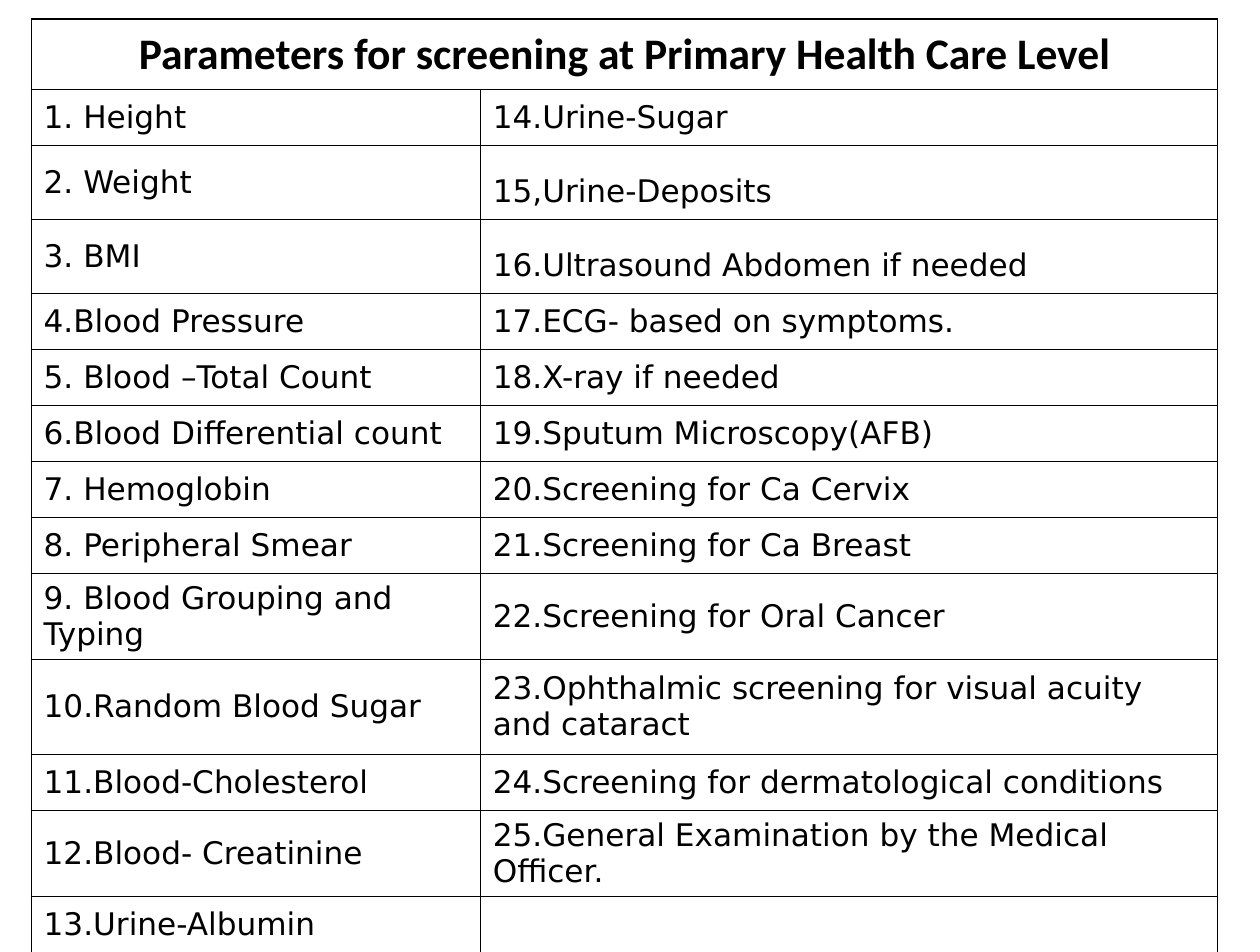
"""Build a slide with a table of health screening parameters."""
from itertools import zip_longest

from lxml.etree import SubElement
from pptx import Presentation
from pptx.dml.color import RGBColor
from pptx.enum.text import MSO_ANCHOR, PP_ALIGN
from pptx.oxml.ns import qn
from pptx.util import Inches, Pt

TITLE = "Parameters for screening at Primary Health Care Level"
LEFT_ITEMS = [
    "1. Height",
    "2. Weight",
    "3. BMI",
    "4.Blood Pressure",
    "5. Blood –Total Count",
    "6.Blood Differential count",
    "7. Hemoglobin",
    "8. Peripheral Smear",
    "9. Blood Grouping and Typing",
    "10.Random Blood Sugar",
    "11.Blood-Cholesterol",
    "12.Blood- Creatinine",
    "13.Urine-Albumin",
]
RIGHT_ITEMS = [
    "14.Urine-Sugar",
    "15,Urine-Deposits",
    "16.Ultrasound Abdomen if needed",
    "17.ECG- based on symptoms.",
    "18.X-ray if needed",
    "19.Sputum Microscopy(AFB)",
    "20.Screening for Ca Cervix",
    "21.Screening for Ca Breast",
    "22.Screening for Oral Cancer",
    "23.Ophthalmic screening for visual acuity and cataract",
    "24.Screening for dermatological conditions",
    "25.General Examination by the Medical Officer.",
]
COLUMN_WIDTHS = [4.01, 6.58]
TITLE_HEIGHT, ITEM_HEIGHT = 0.63, 0.5
TALL_ROWS = {2: 0.66, 3: 0.66, 10: 0.85}
LOOSE_ROWS = (2, 3)
BLACK = RGBColor(0, 0, 0)


def add_borders(cell):
    properties = cell._tc.get_or_add_tcPr()
    for position, side in enumerate(("lnL", "lnR", "lnT", "lnB")):
        line = properties.makeelement(qn(f"a:{side}"), {"w": str(Pt(1))})
        fill = SubElement(line, qn("a:solidFill"))
        SubElement(fill, qn("a:srgbClr"), val=str(BLACK))
        properties.insert(position, line)


def write_cell(cell, text, font_name, size, bold=False):
    cell.text = text
    cell.vertical_anchor = MSO_ANCHOR.MIDDLE
    cell.margin_left = cell.margin_right = Inches(0.11)
    cell.margin_top = cell.margin_bottom = Inches(0.06)
    paragraph = cell.text_frame.paragraphs[0]
    font = paragraph.font
    font.name, font.size, font.bold = font_name, Pt(size), bold
    font.color.rgb = BLACK
    return paragraph


def main():
    presentation = Presentation()
    presentation.slide_width, presentation.slide_height = Inches(11.25), Inches(8.5)
    slide = presentation.slides.add_slide(presentation.slide_layouts[6])
    items = list(zip_longest(LEFT_ITEMS, RIGHT_ITEMS, fillvalue=""))
    heights = [TITLE_HEIGHT] + [
        TALL_ROWS.get(row, ITEM_HEIGHT) for row in range(1, len(items) + 1)
    ]
    table = slide.shapes.add_table(
        len(heights), len(COLUMN_WIDTHS), Inches(0.28), Inches(0.17),
        Inches(sum(COLUMN_WIDTHS)), Inches(sum(heights)),
    ).table
    table.first_row = table.horz_banding = False
    for column, width in zip(table.columns, COLUMN_WIDTHS):
        column.width = Inches(width)
    for row, height in zip(table.rows, heights):
        row.height = Inches(height)
    for cell in table.iter_cells():
        cell.fill.background()
        add_borders(cell)

    table.cell(0, 0).merge(table.cell(0, 1))
    title = write_cell(table.cell(0, 0), TITLE, "Calibri", 28, bold=True)
    title.alignment = PP_ALIGN.CENTER
    for row, texts in enumerate(items, start=1):
        for column, text in enumerate(texts):
            paragraph = write_cell(table.cell(row, column), text, "DejaVu Sans", 20)
            if column == 1 and row in LOOSE_ROWS:
                paragraph.line_spacing = 1.5
    presentation.save("out.pptx")


if __name__ == "__main__":
    main()
